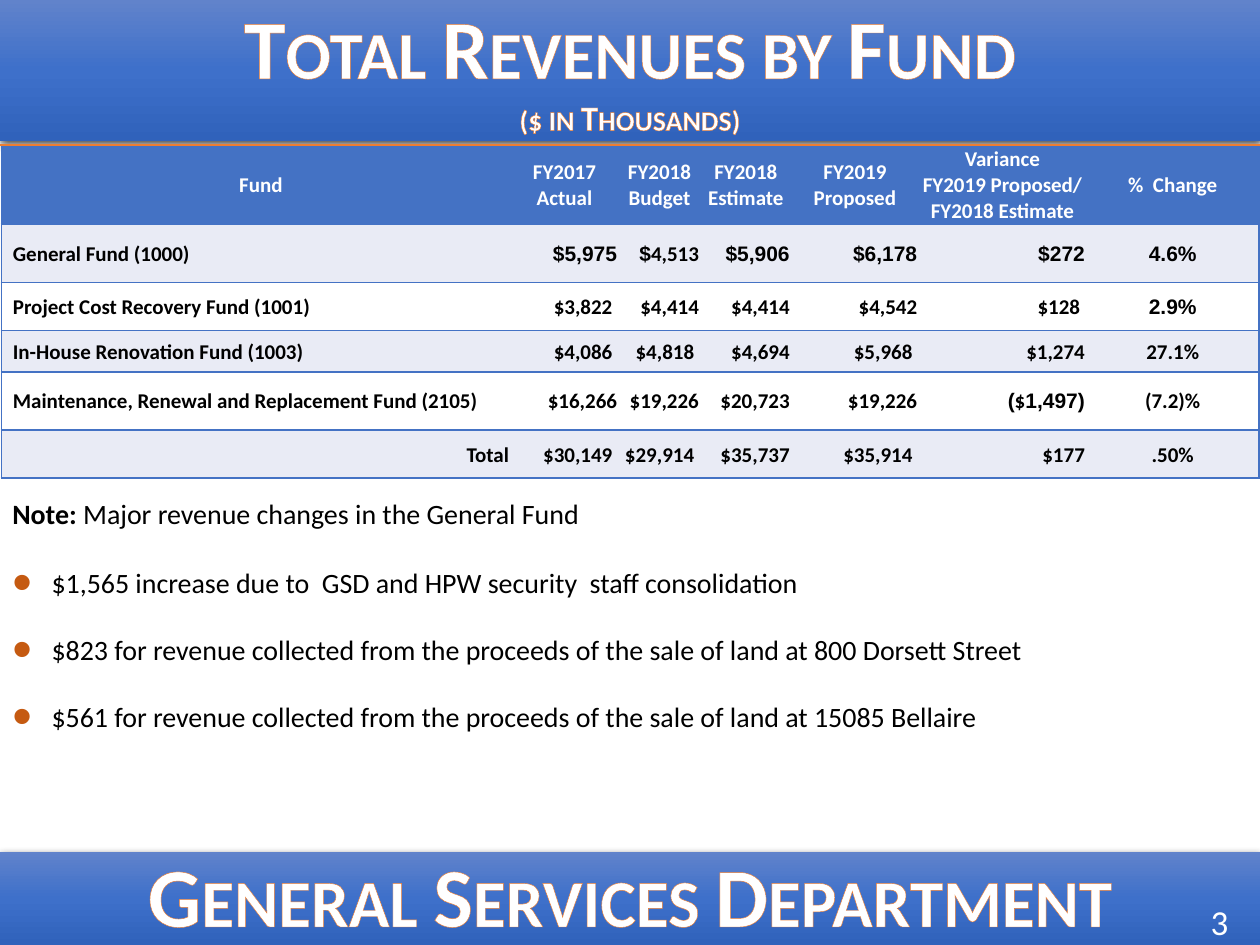
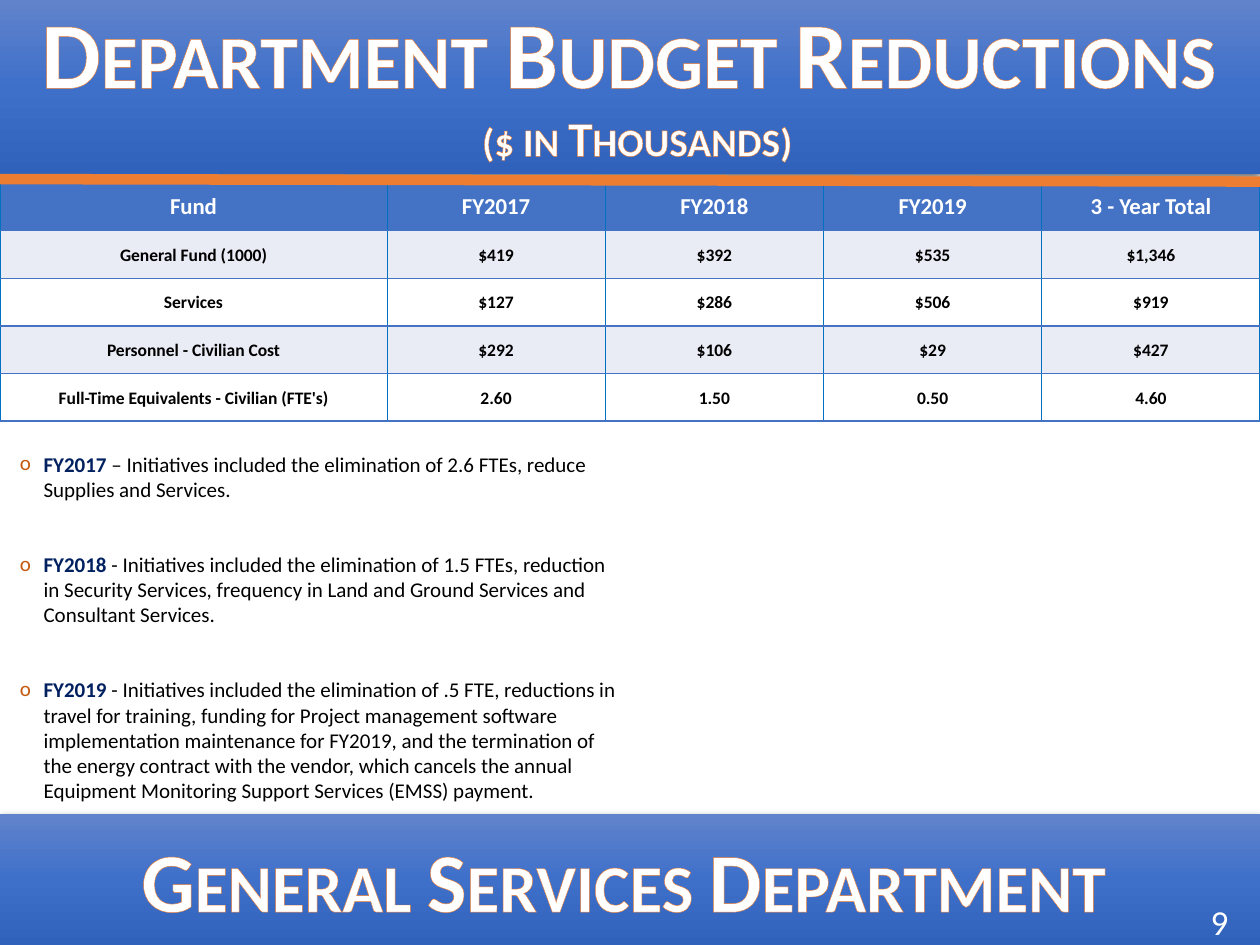
from dataclasses import dataclass

from pptx import Presentation
from pptx.dml.color import RGBColor
from pptx.enum.shapes import MSO_CONNECTOR, MSO_SHAPE
from pptx.enum.text import MSO_ANCHOR, MSO_AUTO_SIZE, PP_ALIGN
from pptx.oxml import parse_xml
from pptx.oxml.ns import nsdecls
from pptx.util import Cm, Pt

RECT = MSO_SHAPE.RECTANGLE
STRAIGHT = MSO_CONNECTOR.STRAIGHT
TOP, MIDDLE = MSO_ANCHOR.TOP, MSO_ANCHOR.MIDDLE
FIXED = MSO_AUTO_SIZE.NONE
LEFT, CENTER, RIGHT = PP_ALIGN.LEFT, PP_ALIGN.CENTER, PP_ALIGN.RIGHT
SIDES = {"L": LEFT, "C": CENTER, "R": RIGHT}
WIDE, HIGH = 25.4, 19.05
NS = nsdecls("a")


@dataclass(frozen=True)
class Theme:
    font: str = "Calibri"
    alt: str = "Arial"
    white: str = "FFFFFF"
    black: str = "000000"
    navy: str = "002060"
    blue: str = "4472C4"
    edge: str = "0070C0"
    pale: str = "E9EBF5"
    orange: str = "ED7D31"
    rust: str = "C55A11"
    shade: tuple = ((0, "6183CB"), (50, "3E70CA"), (100, "3062BB"))
    foot: int = 48
    page: int = 20


T = Theme()


def mold(item, **vals):
    for key, val in vals.items():
        setattr(item, key, val)


def cms(*box):
    return [Cm(n) for n in box]


def look(size, color=T.black, bold=False, name=T.font):
    return dict(size=Pt(size), bold=bold, name=name), color


def write(par, text, plain, mark=None):
    for i, part in enumerate(text.split("|")):
        if part:
            run = par.add_run()
            run.text = part
            vals, color = mark if i % 2 else plain
            mold(run.font, **vals)
            run.font.color.rgb = RGBColor.from_string(color)


def fill_text(frame, lines, plain, mark=None, **vals):
    for i, line in enumerate(lines):
        par = frame.add_paragraph() if i else frame.paragraphs[0]
        write(par, line, plain, mark)
        mold(par, **vals)


def add_box(slide, box, anchor=TOP):
    frame = slide.shapes.add_textbox(*cms(*box)).text_frame
    mold(frame, word_wrap=True, auto_size=FIXED, vertical_anchor=anchor)
    return frame


def ornate(par):
    for run in par.runs:
        props = run.font._element
        props.set("cap", "small")
        props.insert(0, parse_xml(
            f'<a:ln {NS} w="6604"><a:solidFill><a:srgbClr val="{T.orange}"/>'
            '</a:solidFill></a:ln>'))


def add_band(slide, box):
    band = slide.shapes.add_shape(RECT, *cms(*box))
    band.line.fill.background()
    band.shadow.inherit = False
    props = band.element.spPr
    stops = "".join(
        f'<a:gs pos="{at * 1000}"><a:srgbClr val="{color}"/></a:gs>'
        for at, color in T.shade)
    props.find("{*}ln").addprevious(parse_xml(
        f'<a:gradFill {NS}><a:gsLst>{stops}</a:gsLst>'
        '<a:lin ang="5400000" scaled="0"/></a:gradFill>'))
    props.find("{*}effectLst").append(parse_xml(
        f'<a:outerShdw {NS} blurRad="57150" dist="19050" dir="5400000" '
        f'algn="ctr" rotWithShape="0"><a:srgbClr val="{T.black}">'
        '<a:alpha val="63000"/></a:srgbClr></a:outerShdw>'))


def add_head(slide, box, lines, sizes, shift, tall):
    x, y, w, h = box
    add_band(slide, box)
    title = slide.shapes.title
    title.element.getparent().append(title.element)
    place = cms(x + shift[0], y + shift[1], w, tall)
    mold(title, **dict(zip(("left", "top", "width", "height"), place)))
    frame = title.text_frame
    mold(frame, word_wrap=True, auto_size=FIXED, vertical_anchor=TOP)
    for i, (line, size) in enumerate(zip(lines, sizes)):
        par = frame.add_paragraph() if i else frame.paragraphs[0]
        par.alignment = CENTER
        write(par, line, look(size, T.white, True))
        ornate(par)


def add_foot(slide, box, page, shift):
    x, y, w, h = box
    add_band(slide, box)
    frame = add_box(slide, (x + shift[0], y + shift[1], w, 2.31))
    fill_text(frame, ["General Services Department"],
              look(T.foot, T.white, True), alignment=CENTER)
    ornate(frame.paragraphs[0])
    frame = add_box(slide, (x + w - 1.63, y + h - 0.94, 1.63, 0.94), MIDDLE)
    fill_text(frame, [page], look(T.page, T.white), alignment=CENTER)


def add_rule(slide, ends, width):
    rule = slide.shapes.add_connector(STRAIGHT, *cms(*ends))
    rule.line.color.rgb = RGBColor.from_string(T.orange)
    rule.line.width = Pt(width)
    rule.element.spPr.append(parse_xml(f"<a:effectLst {NS}/>"))


def add_edge(cell, side, color, width):
    paint = (f'<a:solidFill><a:srgbClr val="{color}"/></a:solidFill>'
             if color else "<a:noFill/>")
    cell._tc.get_or_add_tcPr().append(parse_xml(
        f'<a:ln{side} {NS} w="{Pt(width)}">{paint}</a:ln{side}>'))


def add_grid(slide, spot, cols, tall, rows, sides, sizes, inner, outer):
    spread = cms(*spot, sum(cols), sum(tall))
    grid = slide.shapes.add_table(len(rows), len(cols), *spread).table
    grid.horz_banding = False
    for col, width in zip(grid.columns, cols):
        col.width = Cm(width)
    for row, height in zip(grid.rows, tall):
        row.height = Cm(height)
    for r, row in enumerate(rows):
        head = r == 0
        size, ink = (sizes[0], T.white) if head else (sizes[1], T.black)
        back = T.blue if head else (T.pale if r % 2 else T.white)
        for c, text in enumerate(row):
            cell = grid.cell(r, c)
            mold(cell, vertical_anchor=MIDDLE, margin_left=Cm(0.03),
                 margin_right=Cm(0.03), margin_top=Cm(0.03), margin_bottom=0)
            fill_text(cell.text_frame, text.split("\n"),
                      look(size, ink, True), look(size, ink, True, T.alt),
                      alignment=CENTER if head else SIDES[sides[c]])
            add_edge(cell, "L", inner if c else outer, 0.5 if c else 1)
            last = c == len(cols) - 1
            add_edge(cell, "R", outer if last else inner, 1 if last else 0.5)
            for side in "TB":
                add_edge(cell, side, T.blue, 1)
            cell.fill.solid()
            cell.fill.fore_color.rgb = RGBColor.from_string(back)
    return grid


def add_notes(slide, box, lines, size, sign, scale, face, indent, gap):
    frame = add_box(slide, box)
    fill_text(frame, lines, look(size), look(size, T.navy, True),
              space_after=Pt(gap))
    for par in frame.paragraphs:
        props = par._p.get_or_add_pPr()
        props.set("marL", str(Cm(indent)))
        props.set("indent", str(-Cm(indent)))
        for part in (f'<a:buClr {NS}><a:srgbClr val="{T.rust}"/></a:buClr>',
                     f'<a:buSzPct {NS} val="{scale * 1000}"/>',
                     f'<a:buFont {NS} typeface="{face}"/>',
                     f'<a:buChar {NS} char="{sign}"/>'):
            props.append(parse_xml(part))


def draw_funds(slide):
    add_head(slide, (0, 0, WIDE, 2.84),
             ["Total Revenues by Fund", "($ in Thousands)"],
             (48, 20), (0, -0.23), 3.18)
    add_foot(slide, (0, HIGH - 1.88, WIDE, 1.88), "3", (0, -0.3))
    rows = [
        ("", "Fund", "FY2017\nActual", "FY2018\nBudget", "FY2018\nEstimate",
         "FY2019\nProposed", "Variance\nFY2019 Proposed/ FY2018 Estimate",
         "%  Change"),
        ("", "General Fund (1000)", "|$5,975", "|$|4,513", "|$5,906",
         "|$6,178", "|$272", "|4.6%"),
        ("", "Project Cost Recovery Fund (1001)", "$3,822 ", "$4,414",
         "$4,414", "$4,542", "$128 ", "|2.9%"),
        ("", "In-House Renovation Fund (1003)", "$4,086 ", "$4,818 ",
         "$4,694", "$5,968 ", "$1,274", "27.1%"),
        ("", "Maintenance, Renewal and Replacement Fund (2105)", "$16,266",
         "$19,226", "$20,723", "$19,226", "|(|$|1,497)", "(7.2)%"),
        ("", "Total", "$30,149 ", "$29,914 ", "$35,737", "$35,914 ",
         "$177", ".50%"),
    ]
    grid = add_grid(slide, (0.03, 2.92),
                    (0.2, 10.06, 2.18, 1.65, 1.83, 2.57, 3.38, 3.48),
                    (1.6, 1.17, 0.97, 0.84, 1.17, 0.97),
                    rows, "LLRRRRRC", (12, 12), None, T.blue)
    grid.cell(5, 1).text_frame.paragraphs[0].alignment = RIGHT
    add_notes(slide, (0, 11.28, WIDE, 4.95), [
        "$1,565 increase due to  GSD and HPW security  staff consolidation",
        "$823 for revenue collected from the proceeds of the sale of land "
        "at 800 Dorsett Street",
        "$561 for revenue collected from the proceeds of the sale of land "
        "at 15085 Bellaire",
    ], 16, "•", 200, T.alt, 0.79, 19)
    fill_text(add_box(slide, (0, 9.88, 14.8, 0.94)),
              ["|Note:| Major revenue changes in the General Fund"],
              look(16), look(16, bold=True))
    add_rule(slide, (0, 2.92, WIDE, 2.92), 1.5)


def draw_cuts(slide):
    add_head(slide, (0, 0, WIDE, 3.5),
             ["Department Budget Reductions ", "($ in Thousands)"],
             (54, 28), (0.15, -0.25), 3.76)
    add_foot(slide, (0, HIGH - 2.63, WIDE, 2.63), "9", (-0.13, 0.15))
    rows = [
        ("Fund", "FY2017", "FY2018", "FY2019", "3 - Year Total"),
        ("General Fund (1000)", "$419", "$392", "$535", "$1,346"),
        ("Services", "$127", "$286", "$506", "$919"),
        ("Personnel - Civilian Cost", "$292", "$106", "$29", "$427"),
        ("Full-Time Equivalents - Civilian (FTE's)",
         "2.60", "1.50", "0.50", "4.60"),
    ]
    add_grid(slide, (0, 3.66), [7.8] + [4.4] * 4, [0.99] + [0.96] * 4,
             rows, "CCCCC", (13, 10), T.edge, T.edge)
    add_rule(slide, (0, 3.61, WIDE, 3.66), 6)
    add_notes(slide, (0.15, 8.97, 12.7, 7.44), [
        "|FY2017| – Initiatives included the elimination of 2.6 FTEs, "
        "reduce Supplies and Services.",
        "|FY2018 |- Initiatives included the elimination of 1.5 FTEs, "
        "reduction in Security Services, frequency in Land and Ground "
        "Services and Consultant Services.",
        "|FY2019| - Initiatives included the elimination of .5 FTE, "
        "reductions in travel for training, funding for Project management "
        "software implementation maintenance for FY2019, and the termination "
        "of the energy contract with the vendor, which cancels the annual "
        "Equipment Monitoring Support Services (EMSS) payment.",
    ], 12, "o", 100, T.font, 0.48, 28.5)


def main():
    deck = Presentation()
    mold(deck, slide_width=Cm(WIDE), slide_height=Cm(HIGH))
    for draw in (draw_funds, draw_cuts):
        draw(deck.slides.add_slide(deck.slide_layouts[5]))
    deck.save("out.pptx")


if __name__ == "__main__":
    main()
